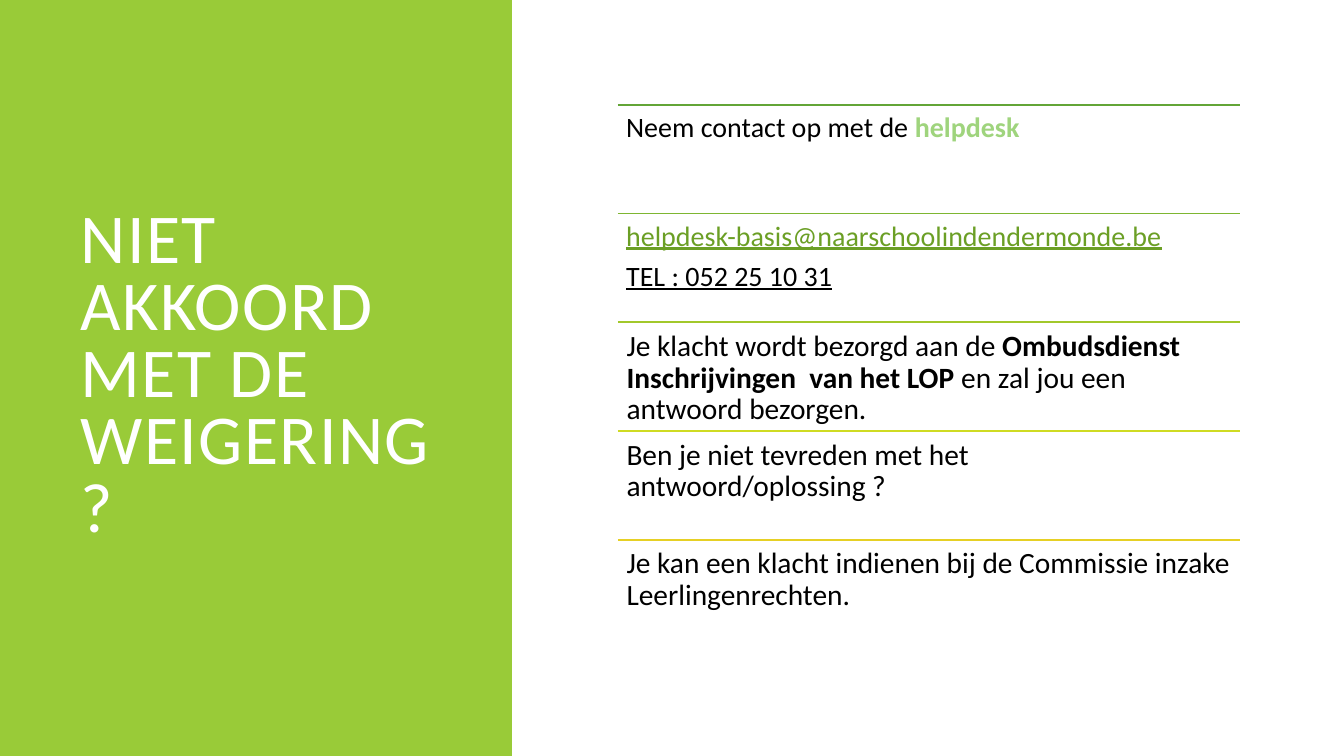
"""Build the slide on what to do when a refusal is disputed."""
from lxml import etree
from pptx import Presentation
from pptx import util as u
from pptx.dml.color import RGBColor
from pptx.enum import shapes, text
from pptx.oxml.ns import qn


def colour(value):
    return RGBColor.from_string(value)


def add_span(para, words, size, ink, bold=False, underline=False):
    span = para.add_run()
    span.text = words
    span.font.name = "Calibri"
    span.font.size = u.Pt(size)
    span.font.color.rgb = colour(ink)
    span.font.bold = bold
    span.font.underline = underline
    return span


deck = Presentation()
deck.slide_width = u.Cm(33.87)
deck.slide_height = u.Cm(19.05)
page = deck.slides.add_slide(deck.slide_layouts[6])

panel = page.shapes.add_shape(
    shapes.MSO_SHAPE.RECTANGLE, 0, 0, u.Cm(12.9), deck.slide_height)
panel.shadow.inherit = False
panel.fill.solid()
panel.fill.fore_color.rgb = colour("99CB38")
panel.line.fill.background()

title = page.shapes.add_textbox(u.Cm(1.78), u.Cm(1.78), u.Cm(9.5), u.Cm(15.47))
title.text_frame.word_wrap = True
title.text_frame.vertical_anchor = text.MSO_ANCHOR.MIDDLE
para = title.text_frame.paragraphs[0]
para.line_spacing = 0.8
span = add_span(para, "NIET AKKOORD MET DE WEIGERING ?", 50, "FFFFFF")
span.font._element.set("spc", "100")

BLACK = "000000"
LEFT, TOP, WIDTH, ROW_HEIGHT = 15.57, 2.64, 15.67, 2.74
steps = [
    ("63A537", 20, [[("Neem contact op met de ", BLACK),
                     ("helpdesk", "9FD47D", True)]]),
    ("7EB631", 20, [[("helpdesk-basis@naarschoolindendermonde.be", "6B9F25", False, True)],
                    [("TEL : 052 25 10 31", BLACK, False, True)]]),
    ("A2C82B", 21, [[("Je klacht wordt bezorgd aan de ", BLACK),
                     ("Ombudsdienst Inschrijvingen  van het LOP ", BLACK, True),
                     ("en zal jou een antwoord bezorgen.", BLACK)]]),
    ("CFDB23", 21, [[("Ben je niet tevreden met het antwoord/oplossing ?", BLACK)]]),
    ("E6D024", 21, [[("Je kan een klacht indienen bij de Commissie inzake "
                      "Leerlingenrechten.", BLACK)]]),
]

for row, (line_colour, size, paragraphs) in enumerate(steps):
    top = u.Cm(TOP + row * ROW_HEIGHT)
    rule = page.shapes.add_connector(
        shapes.MSO_CONNECTOR.STRAIGHT, u.Cm(LEFT), top, u.Cm(LEFT + WIDTH), top)
    rule.line.color.rgb = colour(line_colour)
    rule.line.width = u.Pt(1.25)
    etree.SubElement(rule._element.spPr, qn("a:effectLst"))

    box = page.shapes.add_textbox(u.Cm(LEFT), top, u.Cm(WIDTH), u.Cm(ROW_HEIGHT))
    frame = box.text_frame
    frame.word_wrap = True
    inset = u.Cm(size * 0.01 + 0.01)
    frame.margin_left = frame.margin_right = inset
    frame.margin_top = frame.margin_bottom = inset
    for index, spans in enumerate(paragraphs):
        para = frame.add_paragraph() if index else frame.paragraphs[0]
        para.line_spacing = 0.9
        para.space_after = u.Pt(size * 0.35)
        for words, ink, *style in spans:
            add_span(para, words, size, ink, *style)

deck.save("out.pptx")
